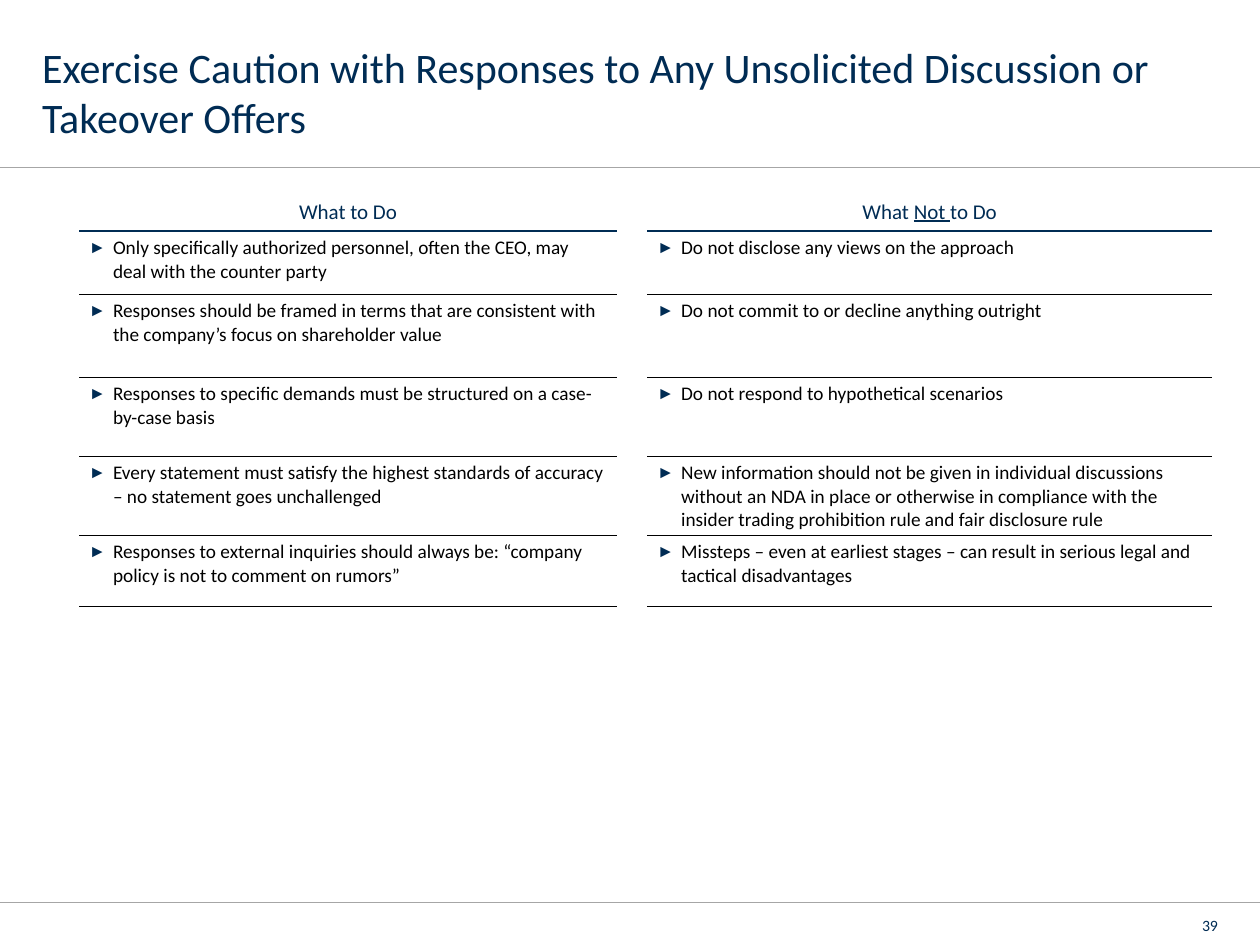
"""Build the slide on what to do and not to do when an unsolicited offer arrives."""
from dataclasses import dataclass

from lxml import etree
from pptx import Presentation
from pptx.dml.color import RGBColor
from pptx.enum.shapes import MSO_CONNECTOR
from pptx.enum.text import MSO_ANCHOR, MSO_AUTO_SIZE, PP_ALIGN
from pptx.oxml.ns import qn
from pptx.util import Emu, Pt

STRAIGHT = MSO_CONNECTOR.STRAIGHT
TOP, BOTTOM = MSO_ANCHOR.TOP, MSO_ANCHOR.BOTTOM
LEFT, CENTER, RIGHT = PP_ALIGN.LEFT, PP_ALIGN.CENTER, PP_ALIGN.RIGHT
NO_FIT = MSO_AUTO_SIZE.NONE
PAGE_WIDTH, PAGE_HEIGHT = 1260, 945
NO_STYLE = "{2D5ABB26-0587-4C30-8999-92F81FD0307C}"


@dataclass
class Theme:
    font: str = "Calibri"
    navy: str = "002C54"
    black: str = "000000"
    gray: str = "A6A6A6"
    title: int = 24
    heading: int = 12
    body: int = 11
    number: int = 9
    thin: float = 0.5
    thick: float = 1.5


theme = Theme()


def px(length):
    return Emu(round(length * 914400 / 126))


def add_run(para, text, size, color):
    span = para.add_run()
    span.text = text
    span.font.name = theme.font
    span.font.size = Pt(size)
    span.font.color.rgb = RGBColor.from_string(color)
    return span


deck = Presentation()
deck.slide_width, deck.slide_height = px(PAGE_WIDTH), px(PAGE_HEIGHT)
page = deck.slides.add_slide(deck.slide_layouts[5])

for y in (902, 167):
    rule = page.shapes.add_connector(STRAIGHT, 0, px(y), px(PAGE_WIDTH), px(y))
    rule.line.color.rgb = RGBColor.from_string(theme.gray)
    rule.line.width = Pt(theme.thin)
    etree.SubElement(rule._element.spPr, qn("a:effectLst"))

title = page.shapes.title
title.left, title.top, title.width, title.height = px(42), px(35), px(1177), px(129)
frame = title.text_frame
frame.margin_left, frame.margin_right = 0, px(13)
frame.margin_top = frame.margin_bottom = px(6)
frame.vertical_anchor = TOP
frame.auto_size = NO_FIT
frame.word_wrap = True
para = frame.paragraphs[0]
para.alignment = LEFT
add_run(para, "Exercise Caution with Responses to Any Unsolicited Discussion or Takeover Offers",
        theme.title, theme.navy)

box = page.shapes.add_textbox(px(1129), px(908), px(89), px(27))
frame = box.text_frame
frame.margin_left = frame.margin_right = frame.margin_top = frame.margin_bottom = 0
frame.vertical_anchor = BOTTOM
frame.word_wrap = True
para = frame.paragraphs[0]
para.alignment = RIGHT
add_run(para, "39", theme.number, theme.navy)

headings = [["What to Do"], ["What ", "Not ", "to Do"]]
advice = [
    ("Only specifically authorized personnel, often the CEO, may deal with the counter party",
     "Do not disclose any views on the approach"),
    ("Responses should be framed in terms that are consistent with the company’s focus on "
     "shareholder value",
     "Do not commit to or decline anything outright"),
    ("Responses to specific demands must be structured on a case-by-case basis",
     "Do not respond to hypothetical scenarios"),
    ("Every statement must satisfy the highest standards of accuracy – no statement goes "
     "unchallenged",
     "New information should not be given in individual discussions without an NDA in place or "
     "otherwise in compliance with the insider trading prohibition rule and fair disclosure rule"),
    ("Responses to external inquiries should always be: “company policy is not to comment on "
     "rumors”",
     "Missteps – even at earliest stages – can result in serious legal and tactical "
     "disadvantages"),
]
column_widths = [538, 30, 565]
row_heights = [65, 63, 83, 79, 71, 71]

table_frame = page.shapes.add_table(len(row_heights), len(column_widths), px(79), px(166),
                                    px(sum(column_widths)), px(sum(row_heights)))
table = table_frame.table
table.first_row = table.horz_banding = False
table._tbl.tblPr.find(qn("a:tableStyleId")).text = NO_STYLE
for column, width in zip(table.columns, column_widths):
    column.width = px(width)
for row, height in zip(table.rows, row_heights):
    row.height = px(height)

for row in range(len(row_heights)):
    for side, column in enumerate((0, 2)):
        cell = table.cell(row, column)
        para = cell.text_frame.paragraphs[0]
        if row == 0:
            cell.vertical_anchor = BOTTOM
            para.alignment = CENTER
            for text in headings[side]:
                span = add_run(para, text, theme.heading, theme.navy)
                span.font.underline = text == "Not "
        else:
            cell.margin_left = cell.margin_right = px(10)
            cell.margin_top = cell.margin_bottom = px(5)
            para.space_after = Pt(1)
            add_run(para, advice[row - 1][side], theme.body, theme.black)
            props = para._p.get_or_add_pPr()
            props.set("marL", str(px(24)))
            props.set("indent", str(-px(24)))
            bullet_color = etree.SubElement(props, qn("a:buClr"))
            etree.SubElement(bullet_color, qn("a:srgbClr"), val=theme.navy)
            etree.SubElement(props, qn("a:buSzPct"), val="90000")
            etree.SubElement(props, qn("a:buFont"), typeface="Arial")
            etree.SubElement(props, qn("a:buChar"), char="►")

        edges = {"a:lnT": row - 1, "a:lnB": row}
        for tag, line_index in edges.items():
            if line_index < 0:
                continue
            weight, color = (theme.thick, theme.navy) if line_index == 0 else (theme.thin, theme.black)
            border = etree.SubElement(cell._tc.get_or_add_tcPr(), qn(tag), w=str(Pt(weight)))
            fill = etree.SubElement(border, qn("a:solidFill"))
            etree.SubElement(fill, qn("a:srgbClr"), val=color)

for cell in table.iter_cells():
    cell.fill.background()

deck.save("out.pptx")
